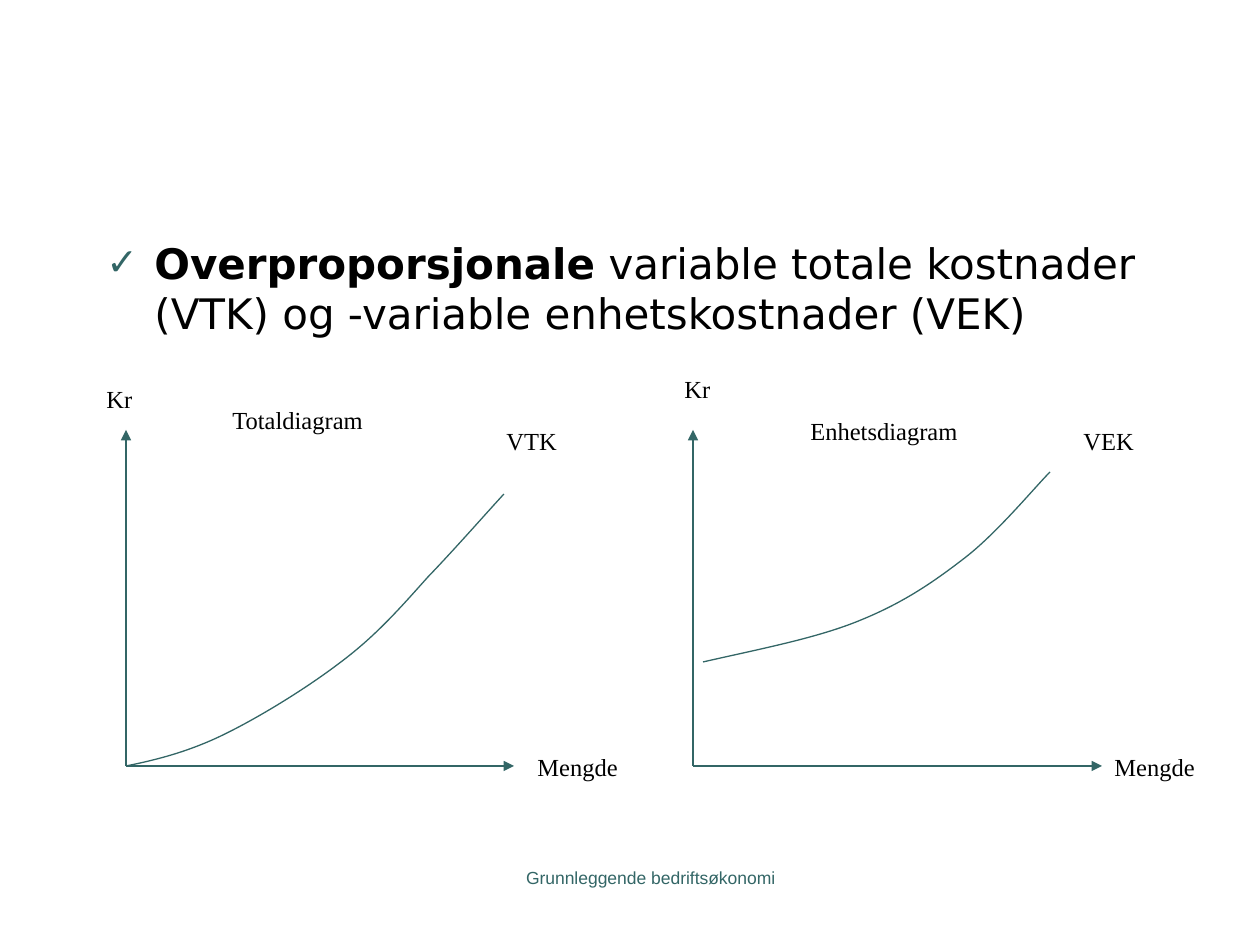
from lxml import etree
from pptx import Presentation
from pptx.dml.color import RGBColor
from pptx.enum.shapes import MSO_CONNECTOR
from pptx.enum.text import PP_ALIGN
from pptx.oxml.ns import qn
from pptx.util import Emu, Pt

STRAIGHT = MSO_CONNECTOR.STRAIGHT
CENTER = PP_ALIGN.CENTER
LEFT = PP_ALIGN.LEFT
SCALE = 914400 / 126  # EMU in one px


def px(length):
    return Emu(round(length * SCALE))


def color(hex_string):
    return RGBColor.from_string(hex_string)


class SlideBuilder:
    TEAL = "336666"
    BLACK = "000000"
    LABEL_FONT = "Times New Roman"
    LINE_WIDTH = Pt(0.75)

    def __init__(self, slide):
        self.slide = slide
        self.shapes = slide.shapes

    def start_group(self):
        self.shapes = self.slide.shapes.add_group_shape().shapes

    def text(self, left, top, width, height, runs, size, font, ink=BLACK, align=LEFT):
        """Add a text box; runs is a list of (wording, bold)."""
        box = self.shapes.add_textbox(px(left), px(top), px(width), px(height))
        box.text_frame.word_wrap = True
        para = box.text_frame.paragraphs[0]
        para.alignment = align
        for wording, bold in runs:
            span = para.add_run()
            span.text = wording
            span.font.name = font
            span.font.size = Pt(size)
            span.font.bold = bold
            span.font.color.rgb = color(ink)
        return para

    def label(self, left, top, width, wording):
        self.text(left, top, width, 42, [(wording, False)], 14, self.LABEL_FONT)

    def bullet(self, para, symbol, indent):
        props = para._p.get_or_add_pPr()
        props.set("marL", str(px(indent)))
        props.set("indent", str(-px(indent)))
        bullet_color = etree.SubElement(props, qn("a:buClr"))
        etree.SubElement(bullet_color, qn("a:srgbClr"), val=self.TEAL)
        etree.SubElement(props, qn("a:buSzPct"), val="90000")
        etree.SubElement(props, qn("a:buFont"), typeface="DejaVu Sans")
        etree.SubElement(props, qn("a:buChar"), char=symbol)

    def stroke(self, line):
        line.color.rgb = color(self.TEAL)
        line.width = self.LINE_WIDTH

    def arrow(self, start, end):
        arrow = self.shapes.add_connector(STRAIGHT, *map(px, start + end))
        self.stroke(arrow.line)
        etree.SubElement(arrow.line._get_or_add_ln(), qn("a:tailEnd"), type="triangle")
        etree.SubElement(arrow._element.spPr, qn("a:effectLst"))

    def curve(self, points):
        """Draw a start point followed by Bezier triples."""
        builder = self.shapes.build_freeform(*points[0], scale=SCALE)
        builder.add_line_segments(points[1:], close=False)
        shape = builder.convert_to_shape()
        shape.shadow.inherit = False
        shape.fill.background()
        self.stroke(shape.line)
        # Merge every three line segments into one cubic segment
        segments = list(shape._element.iter(qn("a:lnTo")))
        for first in range(0, len(segments), 3):
            cubic = etree.Element(qn("a:cubicBezTo"))
            segments[first].addprevious(cubic)
            for segment in segments[first:first + 3]:
                cubic.append(segment[0])
                segment.getparent().remove(segment)

    def diagram(self, origin, axis_right, labels, points):
        self.start_group()
        for label in labels:
            self.label(*label)
        self.arrow(origin, (origin[0], 430))
        self.arrow(origin, (axis_right, origin[1]))
        self.curve(points)


def main():
    deck = Presentation()
    deck.slide_width, deck.slide_height = px(1260), px(945)
    page = SlideBuilder(deck.slides.add_slide(deck.slide_layouts[6]))

    # Footer and bullet text
    page.text(451, 861, 399, 63, [("Grunnleggende bedriftsøkonomi", False)],
              10, "Arial", page.TEAL, CENTER)
    para = page.text(
        94, 231, 1071, 609,
        [("Overproporsjonale", True),
         (" variable totale kostnader (VTK) og -variable enhetskostnader (VEK)", False)],
        24, "DejaVu Sans")
    page.bullet(para, "✓", 48)

    # Total cost diagram
    page.diagram(
        (126, 766), 514,
        [(94, 378, 105, "Kr"), (525, 746, 116, "Mengde"),
         (220, 399, 262, "Totaldiagram"), (494, 420, 105, "VTK")],
        [(126, 766),
         (156, 760), (188, 752), (223, 735),
         (260, 717), (307, 688), (341, 662),
         (377, 635), (402, 606), (428, 577),
         (455, 549), (491, 508), (504, 494)])

    # Unit cost diagram
    page.diagram(
        (693, 766), 1102,
        [(672, 368, 73, "Kr"), (1102, 746, 116, "Mengde"),
         (798, 410, 262, "Enhetsdiagram"), (1071, 420, 105, "VEK")],
        [(703, 662),
         (760, 649), (818, 638), (861, 620),
         (905, 602), (935, 581), (966, 557),
         (998, 532), (1036, 486), (1050, 472)])

    deck.save("out.pptx")


if __name__ == "__main__":
    main()
